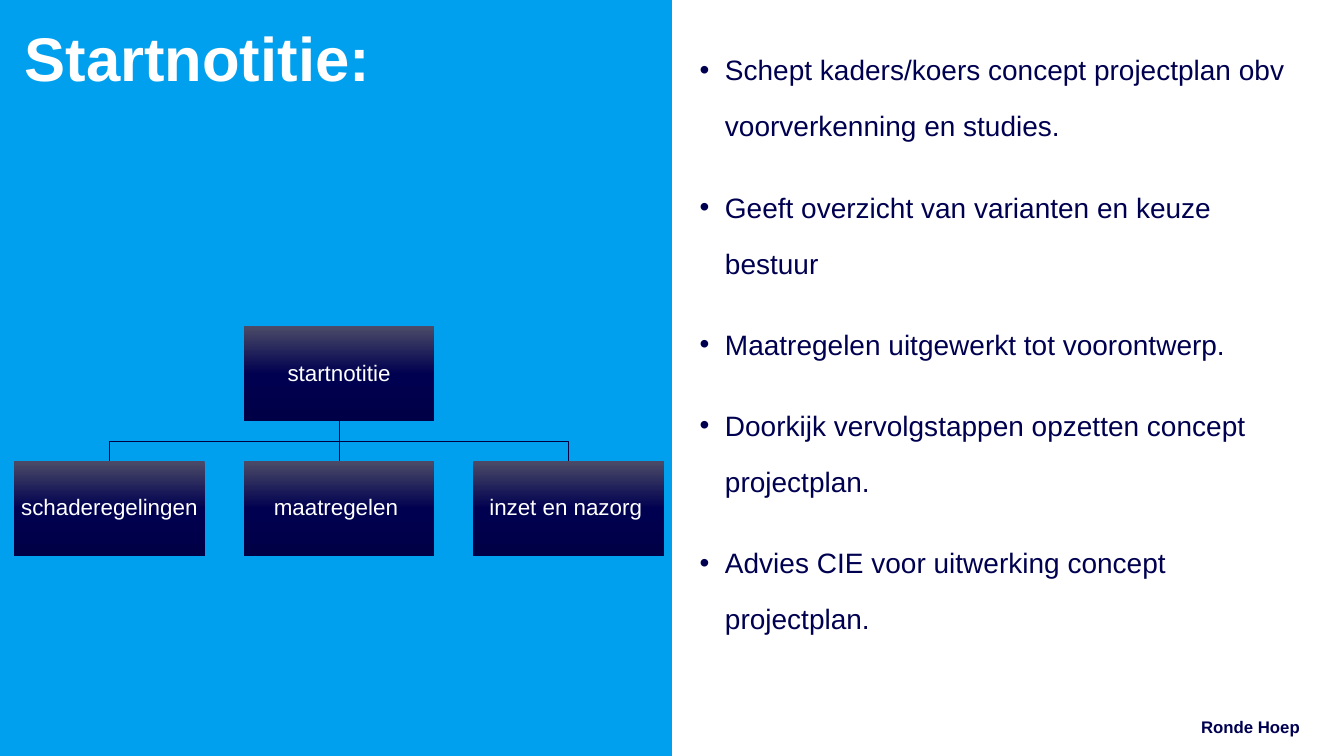
"""Builds the slide on the start note, with its parts and its aims."""
from lxml.etree import SubElement
from pptx import Presentation
from pptx.dml.color import RGBColor
from pptx.enum.shapes import MSO_CONNECTOR, MSO_SHAPE
from pptx.enum.text import MSO_ANCHOR, PP_ALIGN
from pptx.oxml.ns import qn
from pptx.util import Cm, Pt

TITLE = "Startnotitie:"
FOOTER = "Ronde Hoep"
ROOT = "startnotitie"
BRANCHES = ["schaderegelingen", "maatregelen ", "inzet en nazorg "]
AIMS = [
    "Schept kaders/koers concept projectplan obv voorverkenning en studies.",
    "Geeft overzicht van varianten en keuze bestuur",
    "Maatregelen uitgewerkt tot voorontwerp.",
    "Doorkijk vervolgstappen opzetten concept projectplan.",
    "Advies CIE voor uitwerking concept projectplan.",
]
NAVY, BLUE, WHITE, LINE = "000050", "00A0EF", "FFFFFF", "000040"
GRADIENT = [(0, "4B4B68"), (50, NAVY), (100, "000047")]
PAGE_WIDTH, PAGE_HEIGHT = Cm(33.87), Cm(19.05)
BOX_WIDTH, BOX_HEIGHT = Cm(4.81), Cm(2.4)
TREE_LEFT, ROOT_TOP, COLUMN_STEP, ROW_STEP = Cm(0.35), Cm(8.22), Cm(5.79), Cm(3.4)


def color(value):
    return RGBColor.from_string(value)


def add_span(para, text, size, ink, bold=False):
    span = para.add_run()
    span.text = text
    span.font.name = "Arial"
    span.font.size = Pt(size)
    span.font.bold = bold
    span.font.color.rgb = color(ink)


def set_frame(box, anchor, side=0, edge=0):
    frame = box.text_frame
    frame.word_wrap = True
    frame.vertical_anchor = anchor
    frame.margin_left = frame.margin_right = Cm(side)
    frame.margin_top = frame.margin_bottom = Cm(edge)
    return frame


def add_text_box(page, left, top, width, height, anchor, edge):
    box = page.shapes.add_textbox(Cm(left), Cm(top), Cm(width), Cm(height))
    return set_frame(box, anchor, edge=edge)


def add_rectangle(page, left, top, width, height):
    box = page.shapes.add_shape(MSO_SHAPE.RECTANGLE, left, top, width, height)
    box.shadow.inherit = False
    box.line.fill.background()
    return box


def add_node(page, text, column, row):
    box = add_rectangle(page, TREE_LEFT + column * COLUMN_STEP,
                        ROOT_TOP + row * ROW_STEP, BOX_WIDTH, BOX_HEIGHT)
    box.fill.gradient()
    box.fill.gradient_angle = 270
    stops = box.element.spPr.find(".//" + qn("a:gsLst"))
    stops.clear()
    for percent, shade in GRADIENT:
        stop = SubElement(stops, qn("a:gs"), pos=str(percent * 1000))
        SubElement(stop, qn("a:srgbClr"), val=shade)
    para = set_frame(box, MSO_ANCHOR.MIDDLE, 0.03, 0.03).paragraphs[0]
    para.alignment = PP_ALIGN.CENTER
    para.line_spacing = 0.9
    add_span(para, text, 16, WHITE)
    return box


def style_line(link):
    link.line.color.rgb = color(LINE)
    link.line.width = Pt(0.5)


def add_straight(page, upper, lower):
    link = page.shapes.add_connector(MSO_CONNECTOR.STRAIGHT, 0, 0, 0, 0)
    link.begin_connect(upper, 2)
    link.end_connect(lower, 0)
    SubElement(link.element.spPr, qn("a:effectLst"))
    style_line(link)


def add_elbow(page, upper, lower):
    start_x = upper.left + upper.width // 2
    end_x = lower.left + lower.width // 2
    start_y = upper.top + upper.height
    middle_y = (start_y + lower.top) // 2
    outline = page.shapes.build_freeform(start_x, start_y)
    outline.add_line_segments(
        [(start_x, middle_y), (end_x, middle_y), (end_x, lower.top)], close=False)
    link = outline.convert_to_shape()
    link.shadow.inherit = False
    link.fill.background()
    style_line(link)


def add_tree(page):
    middle = len(BRANCHES) // 2
    root = add_node(page, ROOT, middle, 0)
    for column, text in enumerate(BRANCHES):
        branch = add_node(page, text, column, 1)
        join = add_straight if column == middle else add_elbow
        join(page, root, branch)


def add_aims(page):
    frame = add_text_box(page, 17.63, 0.64, 15.19, 16.1, MSO_ANCHOR.TOP, 0.13)
    for index, text in enumerate(AIMS):
        para = frame.add_paragraph() if index else frame.paragraphs[0]
        properties = para._p.get_or_add_pPr()
        properties.set("marL", str(Cm(0.64)))
        properties.set("indent", str(-Cm(0.64)))
        SubElement(properties, qn("a:buFont"), typeface="Arial")
        SubElement(properties, qn("a:buChar"), char="•")
        para.line_spacing = Pt(40)
        para.space_before = Pt(18 if index else 0)
        add_span(para, text, 20, NAVY)


def main():
    deck = Presentation()
    deck.slide_width, deck.slide_height = PAGE_WIDTH, PAGE_HEIGHT
    page = deck.slides.add_slide(deck.slide_layouts[6])

    panel = add_rectangle(page, 0, 0, PAGE_WIDTH // 2, PAGE_HEIGHT)
    panel.fill.solid()
    panel.fill.fore_color.rgb = color(BLUE)

    title = add_text_box(page, 0.62, 0.58, 14.7, 16.36, MSO_ANCHOR.TOP, 0.13)
    title.paragraphs[0].line_spacing = 0.9
    add_span(title.paragraphs[0], TITLE, 44, WHITE, bold=True)

    add_aims(page)
    add_tree(page)

    footer = add_text_box(page, 17.75, 18.06, 15.01, 0.51, MSO_ANCHOR.BOTTOM, 0)
    footer.paragraphs[0].alignment = PP_ALIGN.RIGHT
    add_span(footer.paragraphs[0], FOOTER, 12, NAVY, bold=True)

    deck.save("out.pptx")


if __name__ == "__main__":
    main()
